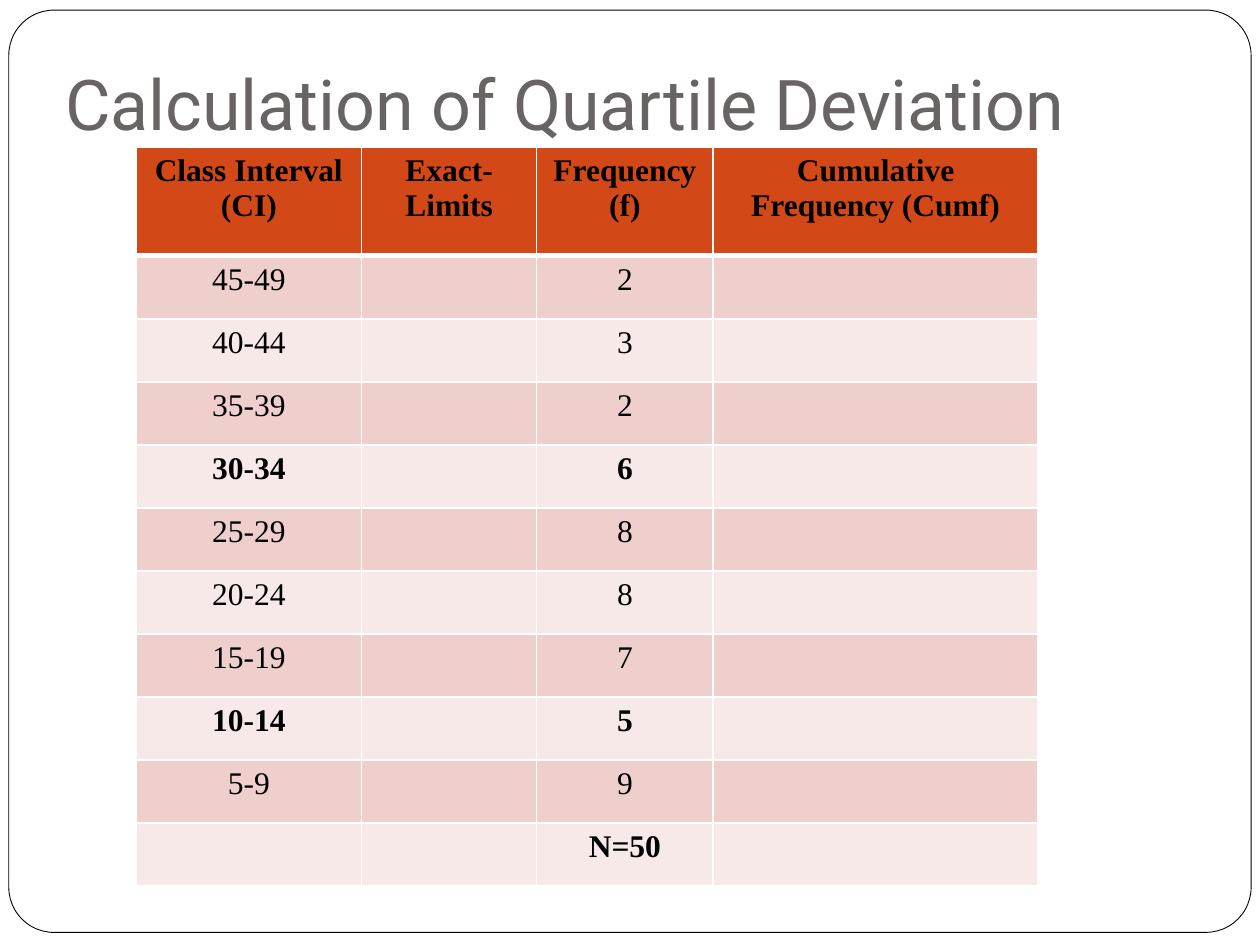
from dataclasses import dataclass

from lxml import etree
from pptx import Presentation
from pptx.dml.color import RGBColor
from pptx.enum.shapes import MSO_SHAPE
from pptx.enum.text import MSO_ANCHOR, PP_ALIGN
from pptx.oxml.ns import qn
from pptx.util import Inches, Pt

ROUND = MSO_SHAPE.ROUNDED_RECTANGLE
BOTTOM = MSO_ANCHOR.BOTTOM
LEFT, CENTER = PP_ALIGN.LEFT, PP_ALIGN.CENTER

TITLE = "Calculation of Quartile Deviation"
HEADS = ["Class Interval (CI)", "Exact-Limits", "Frequency\n(f)",
         "Cumulative Frequency (Cumf)"]
ROWS = [
    ("45-49", "2"),
    ("40-44", "3"),
    ("35-39", "2"),
    ("30-34", "6"),
    ("25-29", "8"),
    ("20-24", "8"),
    ("15-19", "7"),
    ("10-14", "5"),
    ("5-9", "9"),
    ("", "N=50"),
]
STRONG = {"30-34", "10-14", ""}
WIDTHS = [1.79, 1.39, 1.4, 2.58]
HEAD_H, ROW_H = 0.86, 0.5


@dataclass(frozen=True)
class Theme:
    white: str = "FFFFFF"
    black: str = "000000"
    title: str = "696464"
    head: str = "D34817"
    bands: tuple = ("EFCFCC", "F7E9E8")
    title_font: str = "Roboto"
    font: str = "Times New Roman"
    title_size: float = 40
    size: float = 18


T = Theme()


def rgb(code):
    return RGBColor.from_string(code)


def write(frame, text, font=T.font, size=T.size, color=T.black, bold=False, align=CENTER):
    frame.word_wrap = True
    frame.text = text
    for para in frame.paragraphs:
        para.alignment = align
        para.font.name = font
        para.font.size = Pt(size)
        para.font.bold = bold
        para.font.color.rgb = rgb(color)


def edge(cell, side, width):
    line = etree.SubElement(cell._tc.get_or_add_tcPr(), qn(f"a:ln{side}"), w=str(Pt(width)))
    fill = etree.SubElement(line, qn("a:solidFill"))
    etree.SubElement(fill, qn("a:srgbClr"), val=T.white)


def add_frame(slide):
    shape = slide.shapes.add_shape(
        ROUND, Inches(0.07), Inches(0.08), Inches(9.86), Inches(7.32))
    shape.adjustments[0] = 0.049
    shape.shadow.inherit = False
    shape.fill.solid()
    shape.fill.fore_color.rgb = rgb(T.white)
    shape.line.color.rgb = rgb(T.black)
    shape.line.width = Pt(0.5)


def add_title(slide):
    box = slide.shapes.add_textbox(Inches(0.42), 0, Inches(9), Inches(1.25))
    frame = box.text_frame
    frame.vertical_anchor = BOTTOM
    frame.margin_bottom = Inches(0.1)
    write(frame, TITLE, font=T.title_font, size=T.title_size, color=T.title, align=LEFT)


def add_grid(slide):
    rows = [HEADS] + [[span, "", count, ""] for span, count in ROWS]
    high = HEAD_H + ROW_H * len(ROWS)
    table = slide.shapes.add_table(
        len(rows), len(WIDTHS), Inches(1.08), Inches(1.17),
        Inches(sum(WIDTHS)), Inches(high)).table
    for col, width in zip(table.columns, WIDTHS):
        col.width = Inches(width)
    for r, row in enumerate(rows):
        head = r == 0
        table.rows[r].height = Inches(HEAD_H if head else ROW_H)
        for c, text in enumerate(row):
            cell = table.cell(r, c)
            for side in "LRTB":
                thick = (head and side == "B") or (r == 1 and side == "T")
                edge(cell, side, 3 if thick else 1)
            cell.fill.solid()
            cell.fill.fore_color.rgb = rgb(T.head if head else T.bands[(r - 1) % 2])
            write(cell.text_frame, text, bold=head or row[0] in STRONG)


def main():
    deck = Presentation()
    deck.slide_width, deck.slide_height = Inches(10), Inches(7.5)
    slide = deck.slides.add_slide(deck.slide_layouts[6])
    add_frame(slide)
    add_title(slide)
    add_grid(slide)
    deck.save("out.pptx")


if __name__ == "__main__":
    main()
